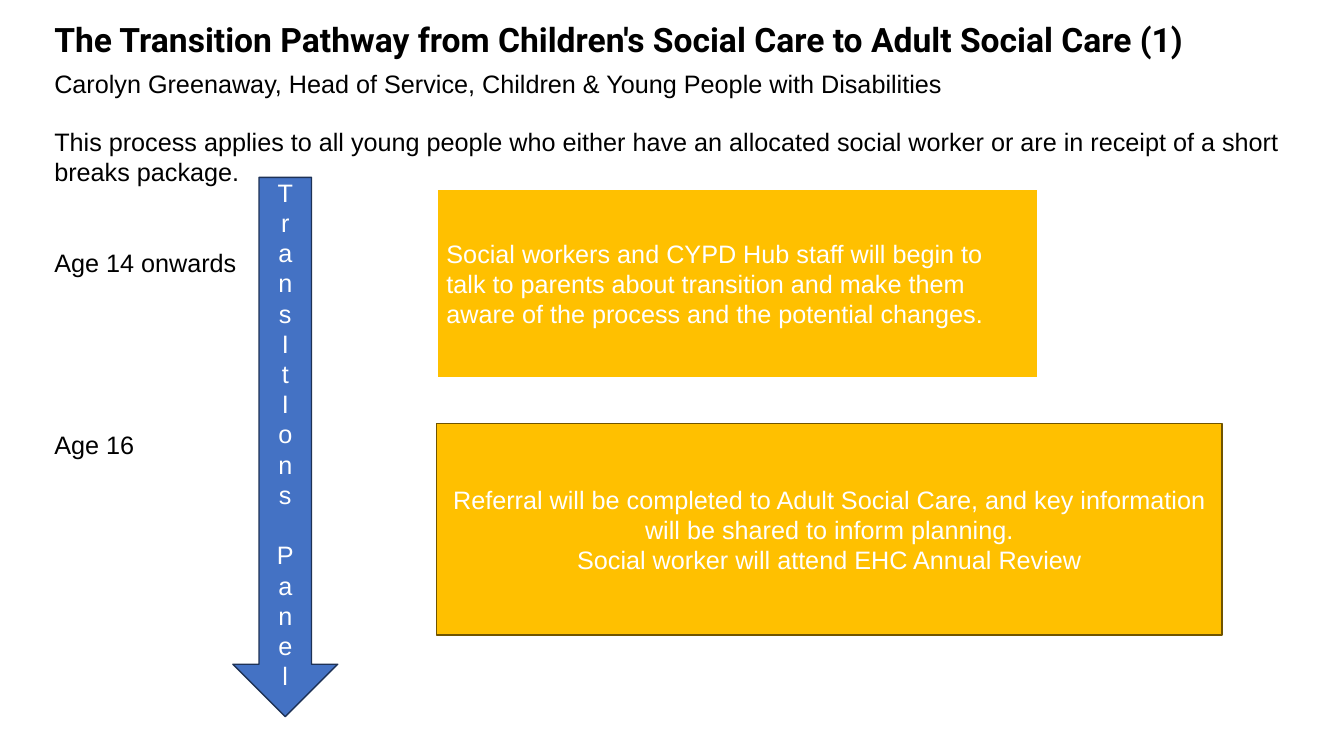
from pptx import Presentation
from pptx.dml.color import RGBColor
from pptx.enum.shapes import MSO_SHAPE
from pptx.enum.text import MSO_ANCHOR, PP_ALIGN
from pptx.util import Inches, Pt

RECT, ARROW = MSO_SHAPE.RECTANGLE, MSO_SHAPE.DOWN_ARROW
LEFT, MID = PP_ALIGN.LEFT, PP_ALIGN.CENTER
TOP, CENTRE = MSO_ANCHOR.TOP, MSO_ANCHOR.MIDDLE

COLOURS = {"ink": "000000", "white": "FFFFFF", "gold": "FFC000",
           "brown": "705400", "blue": "4472C4", "navy": "1E3256"}

TITLE = "The Transition Pathway from Children's Social Care to Adult Social Care (1)"
AUTHOR = "Carolyn Greenaway, Head of Service, Children & Young People with Disabilities"
INTRO = ("This process applies to all young people who either have an allocated "
         "social worker or are in receipt of a short breaks package.")
PANEL = ["TransItIons", "Panel"]
TALK = ["Social workers and CYPD Hub staff will begin to talk to parents about "
        "transition and make them aware of the process and the potential changes."]
REFER = ["Referral will be completed to Adult Social Care, and key information "
         "will be shared to inform planning.",
         "Social worker will attend EHC Annual Review"]

BODY = {"name": "Arial", "size": Pt(18), "bold": False}
HEAD = {"name": "Roboto", "size": Pt(24), "bold": True}

# text, left, top, width, height
NOTES = [
    ([INTRO], 0.44, 1.2, 12.45, 0.7),
    (["Age 14 onwards"], 0.44, 2.4, 2.1, 0.4),
    (["Age 16"], 0.44, 4.21, 2.1, 0.4),
]
# text, preset, place, fill, line, line width, alignment
SHAPES = [
    (TALK, RECT, (4.33, 1.87, 5.97, 1.88), "gold", "white", 1.5, LEFT),
    (["\v".join(word) for word in PANEL], ARROW, (2.31, 1.76, 1.04, 5.35),
     "blue", "navy", 1, MID),
    (REFER, RECT, (4.33, 4.2, 7.79, 2.1), "gold", "brown", 1, MID),
]


def tint(name):
    return RGBColor.from_string(COLOURS[name])


def write(shape, lines, colour, align=LEFT, anchor=TOP, fonts=(), after=0):
    """Fill a shape with paragraphs; fonts gives one format per line."""
    frame = shape.text_frame
    frame.word_wrap = True
    frame.vertical_anchor = anchor
    for i, line in enumerate(lines):
        para = frame.paragraphs[0] if i == 0 else frame.add_paragraph()
        para.text = line
        para.alignment = align
        para.space_after = Pt(after)
        look = fonts[i] if fonts else BODY
        for run in para.runs:
            for key, value in look.items():
                setattr(run.font, key, value)
            run.font.color.rgb = tint(colour)
    return frame


def add_note(slide, lines, place, **style):
    box = slide.shapes.add_textbox(*map(Inches, place))
    write(box, lines, "ink", **style)


def add_block(slide, lines, preset, place, fill, edge, width, align):
    block = slide.shapes.add_shape(preset, *map(Inches, place))
    block.shadow.inherit = False
    block.fill.solid()
    block.fill.fore_color.rgb = tint(fill)
    block.line.color.rgb = tint(edge)
    block.line.width = Pt(width)
    frame = write(block, lines, "white", align, CENTRE)
    if preset == ARROW:
        frame.paragraphs[1].space_before = Pt(21.6)


def main():
    deck = Presentation()
    deck.slide_width, deck.slide_height = Inches(13.33), Inches(7.5)
    slide = deck.slides.add_slide(deck.slide_layouts[6])
    add_note(slide, [TITLE, AUTHOR], (0.44, 0.14, 12.1, 0.89),
             fonts=(HEAD, BODY), after=6)
    for lines, *place in NOTES:
        add_note(slide, lines, place)
    for item in SHAPES:
        add_block(slide, *item)
    deck.save("out.pptx")


if __name__ == "__main__":
    main()
